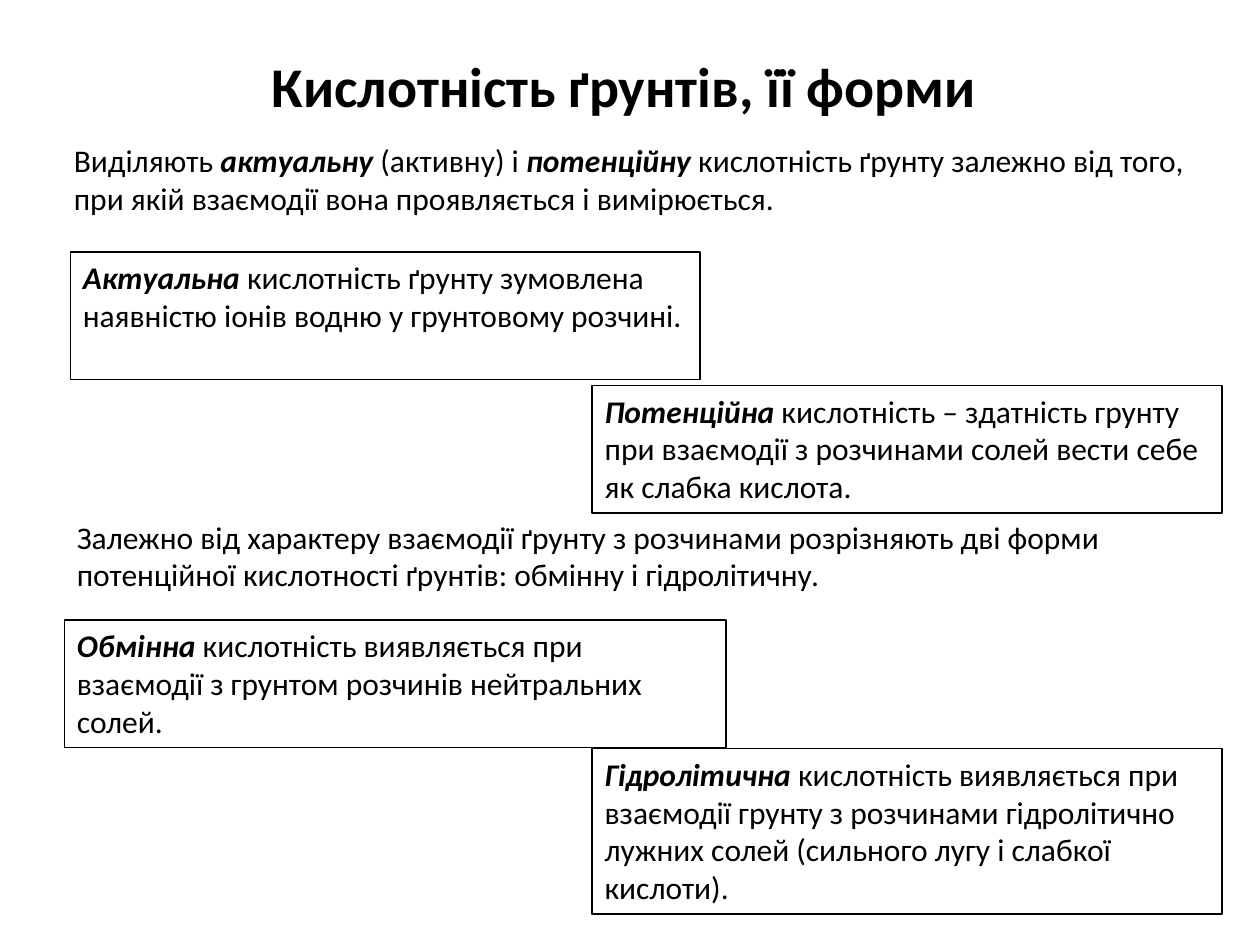
from dataclasses import dataclass

from pptx import Presentation
from pptx.dml.color import RGBColor
from pptx.enum.shapes import MSO_SHAPE as Shape
from pptx.enum.text import MSO_ANCHOR as Anchor, PP_ALIGN as Align
from pptx.util import Cm, Pt

BLACK = RGBColor(0x00, 0x00, 0x00)
FONT = "Calibri"
RIGHT_COLUMN = 11.94
BOX_WIDTH = 12.7
BOX_HEIGHT = 2.57


@dataclass
class Block:
    text: str
    left: float
    top: float
    width: float
    height: float
    framed: bool = False


TITLE = Block("Кислотність ґрунтів, її форми", 2.49, 0.91, 20.19, 1.63)

BLOCKS = [
    Block("Виділяють *актуальну *(активну) і *потенційну *кислотність ґрунту "
          "залежно від того, при якій взаємодії вона проявляється і вимірюється.",
          1.24, 2.72, 23.39, 1.8),
    Block("*Актуальна *кислотність ґрунту зумовлена наявністю іонів водню "
          "у грунтовому розчині.",
          1.42, 5.08, BOX_WIDTH, BOX_HEIGHT, framed=True),
    Block("*Потенційна *кислотність – здатність грунту при взаємодії "
          "з розчинами солей вести себе як слабка кислота.",
          RIGHT_COLUMN, 7.77, BOX_WIDTH, BOX_HEIGHT, framed=True),
    Block("Залежно від характеру взаємодії ґрунту з розчинами розрізняють "
          "дві форми потенційної кислотності ґрунтів: обмінну і гідролітичну.",
          1.3, 10.31, 23.6, 1.8),
    Block("*Обмінна *кислотність виявляється при взаємодії з грунтом "
          "розчинів нейтральних солей.",
          1.3, 12.5, 13.34, BOX_HEIGHT, framed=True),
    Block("*Гідролітична *кислотність виявляється при взаємодії грунту "
          "з розчинами гідролітично лужних солей (сильного лугу і слабкої кислоти).",
          RIGHT_COLUMN, 15.09, BOX_WIDTH, 3.33, framed=True),
]


def add_run(p, text: str, *, size: int = 18, bold: bool = False,
            italic: bool = False) -> None:
    r = p.add_run()
    r.text = text
    r.font.name = FONT
    r.font.size = Pt(size)
    r.font.bold = bold
    r.font.italic = italic
    r.font.color.rgb = BLACK


def add_block(s, block: Block, *, size: int = 18, bold: bool = False,
              align: Align = Align.LEFT) -> None:
    bounds = [Cm(v) for v in (block.left, block.top, block.width, block.height)]
    if block.framed:
        sp = s.shapes.add_shape(Shape.RECTANGLE, *bounds)
        sp.shadow.inherit = False
        sp.fill.background()
        sp.line.color.rgb = BLACK
        sp.line.width = Pt(1)
    else:
        sp = s.shapes.add_textbox(*bounds)
    tf = sp.text_frame
    tf.word_wrap = True
    tf.vertical_anchor = Anchor.TOP
    p = tf.paragraphs[0]
    p.alignment = align
    for i, part in enumerate(block.text.split("*")):
        if part:
            term = i % 2 == 1
            add_run(p, part, size=size, bold=bold or term, italic=term)


def main() -> None:
    prs = Presentation()
    prs.slide_width, prs.slide_height = Cm(25.4), Cm(19.05)
    s = prs.slides.add_slide(prs.slide_layouts[6])
    add_block(s, TITLE, size=32, bold=True, align=Align.CENTER)
    for block in BLOCKS:
        add_block(s, block)
    prs.save("out.pptx")


if __name__ == "__main__":
    main()
